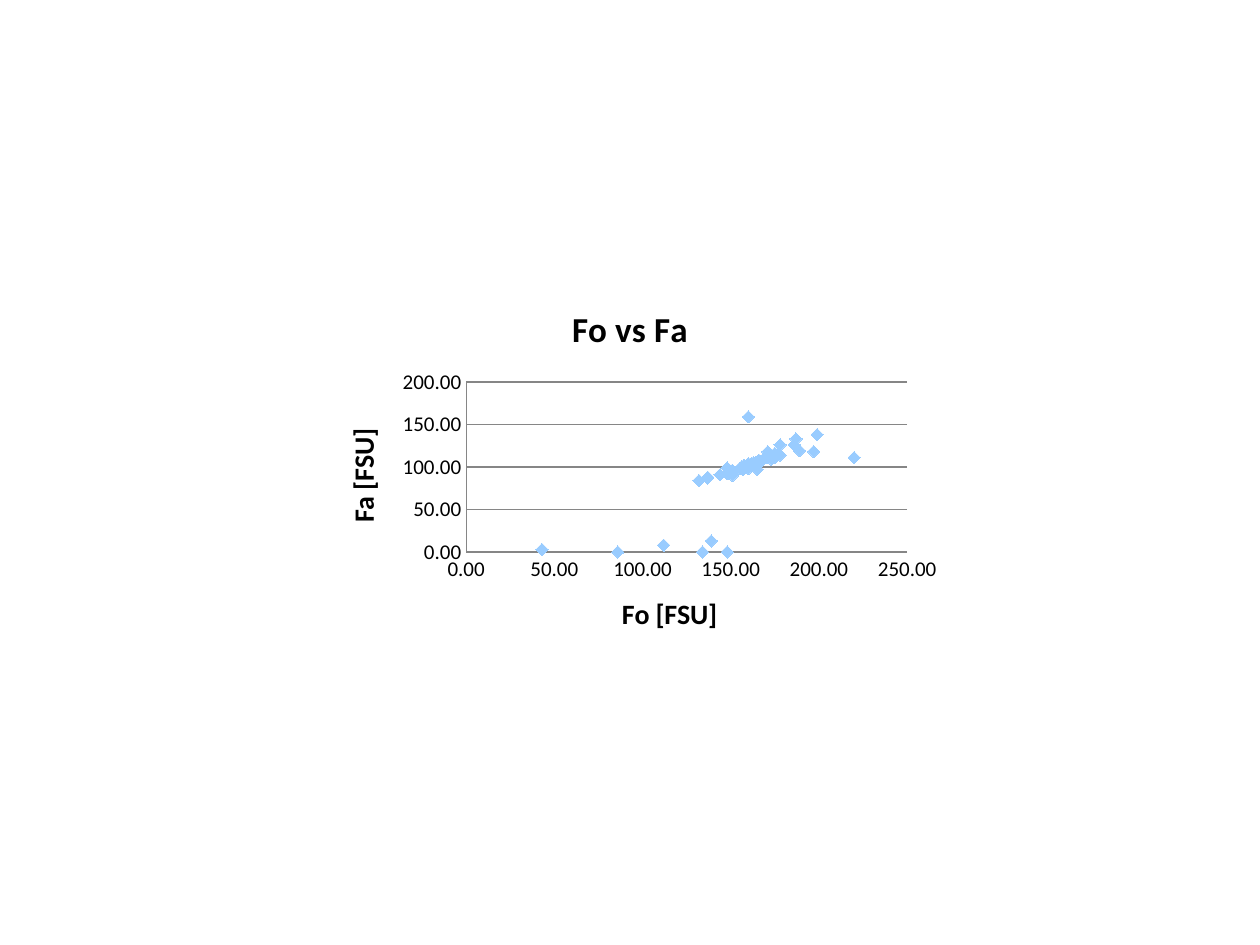
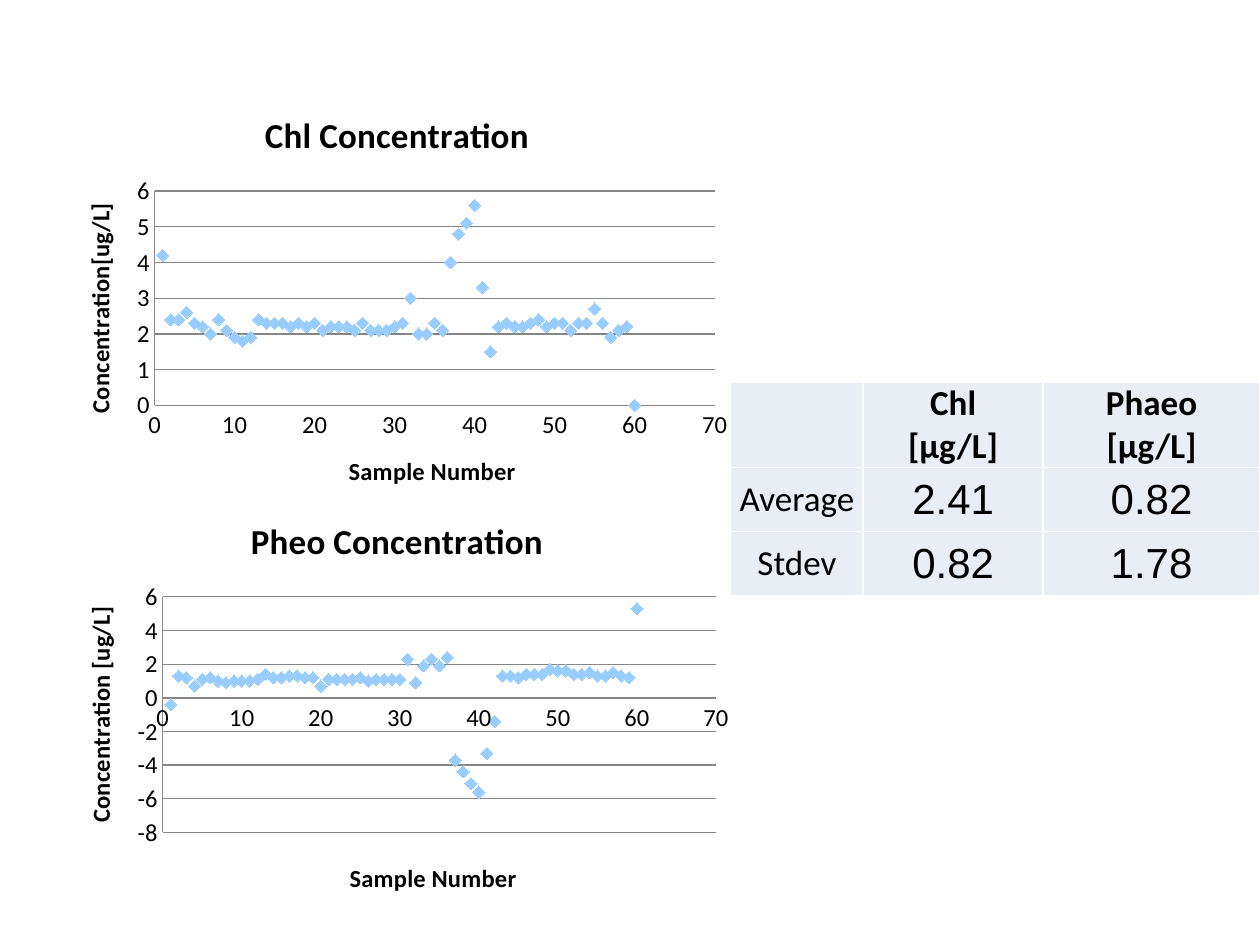
from dataclasses import dataclass
from typing import Any, Optional

from lxml.etree import SubElement
from pptx import Presentation
from pptx.chart.axis import ValueAxis
from pptx.chart.data import XyChartData
from pptx.dml.color import RGBColor
from pptx.enum.chart import XL_CHART_TYPE, XL_MARKER_STYLE, XL_TICK_MARK
from pptx.enum.text import MSO_ANCHOR, PP_ALIGN
from pptx.oxml import parse_xml
from pptx.oxml.ns import nsdecls, qn
from pptx.slide import Slide
from pptx.table import _Cell
from pptx.util import Cm, Pt


@dataclass(frozen=True)
class Theme:
    text: RGBColor = RGBColor(0x00, 0x00, 0x00)
    marker: RGBColor = RGBColor(0x99, 0xCC, 0xFF)
    grid: RGBColor = RGBColor(0x86, 0x86, 0x86)
    cell: RGBColor = RGBColor(0xE9, 0xED, 0xF4)
    border: str = "FFFFFF"
    font: str = "Calibri"
    number_font: str = "Arial"
    title_size: int = 20
    label_size: int = 20
    number_size: int = 24
    marker_size: int = 7


@dataclass(frozen=True)
class AxisScale:
    title: str
    minimum: float
    maximum: float
    step: float


@dataclass(frozen=True)
class ScatterPlot:
    title: str
    series_name: str
    box: tuple[float, float, float, float]
    plot_area: tuple[float, float, float, float]
    horizontal: AxisScale
    vertical: AxisScale
    x_values: list[int]
    y_values: list[float]
    tick_size: int = 14
    axis_title_size: int = 14
    number_format: str = "General"


THEME = Theme()

FO_VALUES = [
    220, 175, 173, 165, 162, 158, 144, 160, 148, 137, 132, 137, 175, 165, 167,
    165, 163, 161, 158, 151, 151, 156, 157, 158, 156, 157, 150, 151, 151, 155,
    199, 197, 171, 178, 186, 187, 112, 139, 134, 148, 86, 43, 162, 164, 161,
    166, 171, 178, 171, 177, 175, 160, 169, 171, 189, 164, 148, 157, 156, 160,
]
FA_VALUES = [
    111, 111, 109, 97, 102, 101, 91, 98, 92, 87, 84, 88, 113, 104, 106,
    106, 105, 102, 101, 90, 96, 99, 99, 100, 100, 97, 94, 96, 95, 98,
    138, 118, 118, 126, 126, 133, 8, 13, 0, 0, 0, 3, 104, 105, 103,
    108, 111, 114, 114, 116, 116, 104, 110, 112, 119, 105, 99, 101, 99, 159,
]
CHL_VALUES = [
    4.2, 2.4, 2.4, 2.6, 2.3, 2.2, 2, 2.4, 2.1, 1.9, 1.8, 1.9, 2.4, 2.3, 2.3,
    2.3, 2.2, 2.3, 2.2, 2.3, 2.1, 2.2, 2.2, 2.2, 2.1, 2.3, 2.1, 2.1, 2.1, 2.2,
    2.3, 3, 2, 2, 2.3, 2.1, 4, 4.8, 5.1, 5.6, 3.3, 1.5, 2.2, 2.3, 2.2,
    2.2, 2.3, 2.4, 2.2, 2.3, 2.3, 2.1, 2.3, 2.3, 2.7, 2.3, 1.9, 2.1, 2.2, 0,
]
PHEO_VALUES = [
    -0.4, 1.3, 1.2, 0.7, 1.1, 1.2, 1, 0.9, 1, 1, 1, 1.1, 1.4, 1.2, 1.2,
    1.3, 1.3, 1.2, 1.2, 0.7, 1.1, 1.1, 1.1, 1.1, 1.2, 1, 1.1, 1.1, 1.1, 1.1,
    2.3, 0.9, 1.9, 2.3, 1.9, 2.4, -3.7, -4.4, -5.1, -5.6, -3.3, -1.4, 1.3, 1.3, 1.2,
    1.4, 1.4, 1.4, 1.7, 1.6, 1.6, 1.4, 1.4, 1.5, 1.3, 1.3, 1.5, 1.3, 1.2, 5.3,
]
SAMPLE_NUMBERS = list(range(1, 61))
SAMPLE_AXIS = AxisScale("Sample Number", 0, 70, 10)

FO_FA_PLOT = ScatterPlot(
    "Fo vs Fa", "Series 1", (6.35, 5.72, 12.7, 7.62), (0.24, 0.26, 0.7, 0.45),
    AxisScale("Fo [FSU]", 0, 250, 50), AxisScale("Fa [FSU]", 0, 200, 50),
    FO_VALUES, FA_VALUES, tick_size=12, axis_title_size=16, number_format="0.00",
)
CONCENTRATION_PLOTS = [
    ScatterPlot(
        "Chl Concentration", "Chl Concentration",
        (1.12, 1.78, 13.77, 8.64), (0.145, 0.24, 0.82, 0.5),
        SAMPLE_AXIS, AxisScale("Concentration[ug/L]", 0, 6, 1),
        SAMPLE_NUMBERS, CHL_VALUES,
    ),
    ScatterPlot(
        "Pheo Concentration", "Series 1",
        (1.12, 9.96, 13.77, 8.64), (0.157, 0.24, 0.81, 0.55),
        SAMPLE_AXIS, AxisScale("Concentration [ug/L]", -8, 6, 2),
        SAMPLE_NUMBERS, PHEO_VALUES,
    ),
]

STATISTICS = [
    ["", "Chl\n[μg/L]", "Phaeo\n[μg/L]"],
    ["Average", "2.41", "0.82"],
    ["Stdev", "0.82", "1.78"],
]
COLUMN_WIDTHS = [2.67, 3.63, 4.37]
ROW_HEIGHTS = [1.71, 1.29, 1.29]


def apply_format(target: Any, values: dict[str, Any]) -> None:
    for name, value in values.items():
        setattr(target, name, value)


def format_font(font: Any, size: int, bold: bool, name: str = THEME.font) -> None:
    apply_format(font, {"name": name, "size": Pt(size), "bold": bold})
    font.color.rgb = THEME.text


def write_title(owner: Any, text: str, size: int) -> None:
    owner.text_frame.text = text
    format_font(owner.text_frame.paragraphs[0].runs[0].font, size, True)


def format_line(line: Any) -> None:
    line.color.rgb = THEME.grid
    line.width = Pt(0.75)


def format_axis(axis: ValueAxis, scale: AxisScale, plot: ScatterPlot) -> None:
    apply_format(axis, {
        "minimum_scale": scale.minimum,
        "maximum_scale": scale.maximum,
        "major_unit": scale.step,
        "major_tick_mark": XL_TICK_MARK.NONE,
        "minor_tick_mark": XL_TICK_MARK.NONE,
        "has_major_gridlines": False,
        "has_title": True,
    })
    apply_format(axis.tick_labels, {
        "number_format": plot.number_format,
        "number_format_is_linked": False,
    })
    format_font(axis.tick_labels.font, plot.tick_size, False)
    format_line(axis.format.line)
    write_title(axis.axis_title, scale.title, plot.axis_title_size)


def place_plot_area(chart: Any, fractions: tuple[float, float, float, float]) -> None:
    plot_area = chart.element.find(".//" + qn("c:plotArea"))
    for layout in plot_area.findall(qn("c:layout")):
        plot_area.remove(layout)
    layout = parse_xml(f"<c:layout {nsdecls('c')}><c:manualLayout/></c:layout>")
    settings = {"layoutTarget": "inner", "xMode": "edge", "yMode": "edge"}
    settings |= dict(zip("xywh", fractions))
    for tag, value in settings.items():
        SubElement(layout[0], qn(f"c:{tag}")).set("val", str(value))
    plot_area.insert(0, layout)


def add_scatter(slide: Slide, plot: ScatterPlot) -> None:
    data = XyChartData()
    points = data.add_series(plot.series_name)
    for x_value, y_value in zip(plot.x_values, plot.y_values):
        points.add_data_point(x_value, y_value)
    box = [Cm(length) for length in plot.box]
    chart = slide.shapes.add_chart(XL_CHART_TYPE.XY_SCATTER, *box, data).chart
    format_font(chart.font, plot.tick_size, False)
    apply_format(chart, {"has_legend": False, "has_title": True})
    write_title(chart.chart_title, plot.title, THEME.title_size)
    chart.plots[0].vary_by_categories = False
    format_axis(chart.category_axis, plot.horizontal, plot)
    format_axis(chart.value_axis, plot.vertical, plot)
    chart.value_axis.has_major_gridlines = True
    format_line(chart.value_axis.major_gridlines.format.line)
    series = chart.plots[0].series[0]
    series.format.line.fill.background()
    marker = series.marker
    apply_format(marker, {"style": XL_MARKER_STYLE.DIAMOND, "size": THEME.marker_size})
    marker.format.fill.solid()
    marker.format.fill.fore_color.rgb = THEME.marker
    marker.format.line.fill.background()
    place_plot_area(chart, plot.plot_area)


def add_borders(cell: _Cell) -> None:
    properties = cell._tc.get_or_add_tcPr()
    for position, side in enumerate(("lnL", "lnR", "lnT", "lnB")):
        properties.insert(position, parse_xml(
            f'<a:{side} {nsdecls("a")} w="12700"><a:solidFill>'
            f'<a:srgbClr val="{THEME.border}"/></a:solidFill></a:{side}>'
        ))


def format_cell(cell: _Cell, text: str, is_header: bool, is_number: bool) -> None:
    cell.text = text
    margins = ("margin_left", "margin_right", "margin_top", "margin_bottom")
    apply_format(cell, dict.fromkeys(margins, Cm(0)))
    cell.vertical_anchor = MSO_ANCHOR.MIDDLE
    cell.fill.solid()
    cell.fill.fore_color.rgb = THEME.cell
    add_borders(cell)
    size = THEME.number_size if is_number else THEME.label_size
    font_name = THEME.number_font if is_number else THEME.font
    for paragraph in cell.text_frame.paragraphs:
        paragraph.alignment = PP_ALIGN.CENTER
        for run in paragraph.runs:
            format_font(run.font, size, is_header, font_name)


def add_statistics(slide: Slide) -> None:
    table = slide.shapes.add_table(
        len(ROW_HEIGHTS), len(COLUMN_WIDTHS), Cm(14.73), Cm(7.7),
        Cm(sum(COLUMN_WIDTHS)), Cm(sum(ROW_HEIGHTS)),
    ).table
    apply_format(table, {"first_row": False, "horz_banding": False})
    for column, width in zip(table.columns, COLUMN_WIDTHS):
        column.width = Cm(width)
    for row_index, texts in enumerate(STATISTICS):
        table.rows[row_index].height = Cm(ROW_HEIGHTS[row_index])
        for column_index, text in enumerate(texts):
            is_header = row_index == 0
            is_number = not is_header and column_index > 0
            format_cell(table.cell(row_index, column_index), text, is_header, is_number)


def main() -> None:
    presentation = Presentation()
    apply_format(presentation, {"slide_width": Cm(25.4), "slide_height": Cm(19.05)})
    blank_layout = presentation.slide_layouts[6]
    add_scatter(presentation.slides.add_slide(blank_layout), FO_FA_PLOT)
    concentration_slide = presentation.slides.add_slide(blank_layout)
    for plot in CONCENTRATION_PLOTS:
        add_scatter(concentration_slide, plot)
    add_statistics(concentration_slide)
    presentation.save("out.pptx")


if __name__ == "__main__":
    main()
